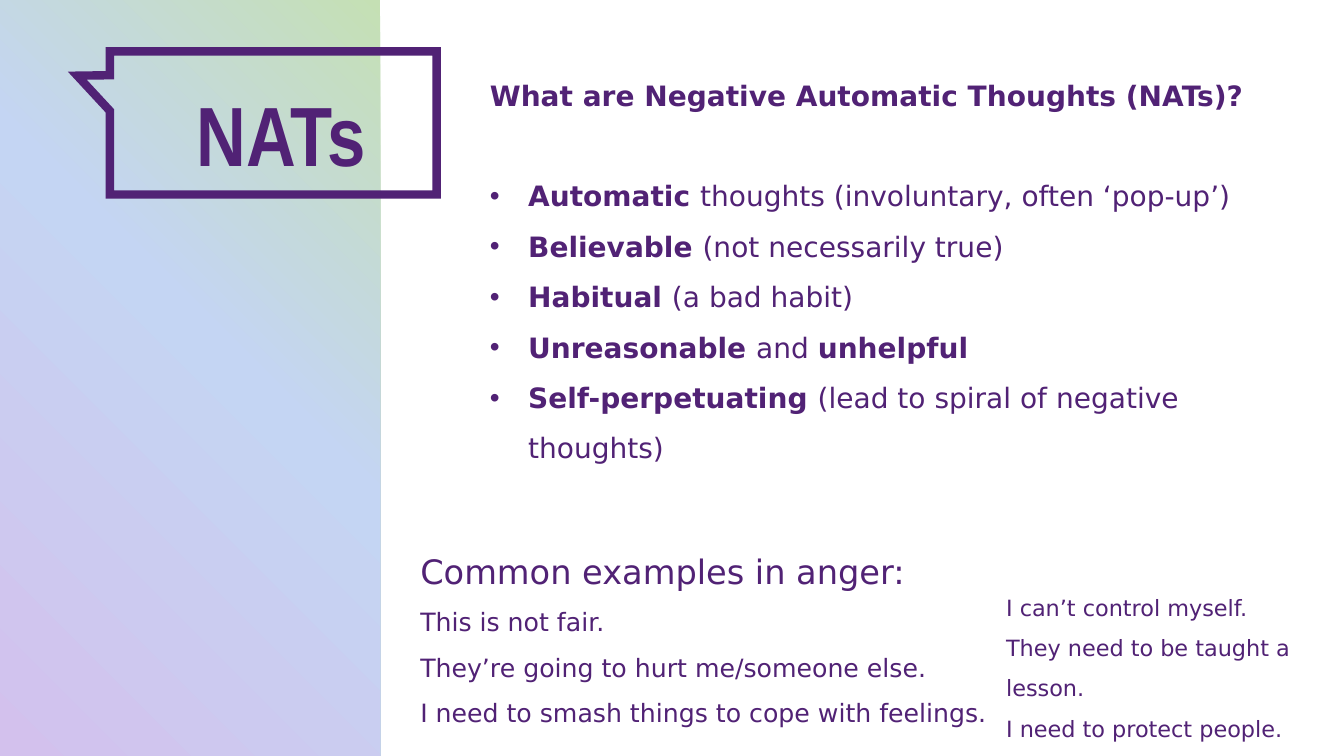
from lxml import etree
from pptx import Presentation
from pptx.dml.color import RGBColor
from pptx.enum.shapes import MSO_SHAPE
from pptx.enum.text import MSO_AUTO_SIZE
from pptx.oxml.ns import qn
from pptx.util import Inches, Pt

RECTANGLE = MSO_SHAPE.RECTANGLE
CALLOUT = MSO_SHAPE.RECTANGULAR_CALLOUT
GROW = MSO_AUTO_SIZE.SHAPE_TO_FIT_TEXT
BLANK_LAYOUT = 6
WIDTH, HEIGHT = Inches(13.33), Inches(7.5)
BODY_FONT, TITLE_FONT = "DejaVu Sans", "Arial Narrow"
COLOURS = {"purple": "512275", "pink": "D3C1ED", "blue": "C4D5F3", "green": "C5E0B4"}
PANEL_STOPS = [(0, "pink"), (56, "blue"), (100, "green")]

TRAITS = [
    [("Automatic ", True), ("thoughts (involuntary, often ‘pop-up’)", False)],
    [("Believable ", True), ("(not necessarily true)", False)],
    [("Habitual ", True), ("(a bad habit)", False)],
    [("Unreasonable ", True), ("and ", False), ("unhelpful", True)],
    [("Self-perpetuating ", True), ("(lead to spiral of negative thoughts)", False)],
]
EXAMPLES = [
    "This is not fair.",
    "They’re going to hurt me/someone else.",
    "I need to smash things to cope with feelings.",
]
MORE_EXAMPLES = [
    "I can’t control myself.",
    "They need to be taught a lesson.",
    "I need to protect people.",
]


def place(left, top, width, height):
    """Turn percentages of the slide's size into lengths."""
    return [int(share * side / 100) for share, side in
            zip((left, top, width, height), (WIDTH, HEIGHT, WIDTH, HEIGHT))]


def colour(name):
    """Return a named colour."""
    return RGBColor.from_string(COLOURS[name])


def add_plain_shape(slide, kind, box):
    """Add a preset shape without shadow, fill or line."""
    shape = slide.shapes.add_shape(kind, *place(*box))
    shape.shadow.inherit = False
    shape.fill.background()
    shape.line.fill.background()
    return shape


def add_gradient_panel(slide, box, stops):
    """Add a panel whose gradient spreads from its bottom left corner."""
    panel = add_plain_shape(slide, RECTANGLE, box)
    gradient = etree.Element(qn("a:gradFill"), rotWithShape="1")
    stop_list = etree.SubElement(gradient, qn("a:gsLst"))
    for percent, name in stops:
        stop = etree.SubElement(stop_list, qn("a:gs"), pos=str(percent * 1000))
        etree.SubElement(stop, qn("a:srgbClr"), val=COLOURS[name])
    spread = etree.SubElement(gradient, qn("a:path"), path="circle")
    etree.SubElement(spread, qn("a:fillToRect"), t="100000", r="100000")
    properties = panel.element.spPr
    properties.replace(properties.find(qn("a:noFill")), gradient)


def add_callout(slide, box, pointer):
    """Add an outlined speech callout with sharp corners."""
    callout = add_plain_shape(slide, CALLOUT, box)
    for index, value in enumerate(pointer):
        callout.adjustments[index] = value
    callout.line.color.rgb = colour("purple")
    callout.line.width = Pt(6)
    outline = callout.element.spPr.find(qn("a:ln"))
    etree.SubElement(outline, qn("a:miter"), lim="800000")


def add_text_frame(slide, box):
    """Add a wrapping text box and return its text frame."""
    frame = slide.shapes.add_textbox(*place(*box)).text_frame
    frame.word_wrap = True
    frame.auto_size = GROW
    return frame


def add_paragraph(frame, runs, size, font=BODY_FONT, spacing=1.5):
    """Write (text, bold) runs into the frame's next paragraph."""
    first = frame.paragraphs[0]
    paragraph = frame.add_paragraph() if first.runs else first
    paragraph.line_spacing = spacing
    for text, bold in runs:
        run = paragraph.add_run()
        run.text = text
        run.font.size = Pt(size)
        run.font.name = font
        run.font.bold = bold
        run.font.color.rgb = colour("purple")
    return paragraph


def indent(paragraph, margin, first_line=0):
    """Set the left margin and first line indent in inches."""
    properties = paragraph._p.get_or_add_pPr()
    properties.set("marL", str(Inches(margin)))
    properties.set("indent", str(Inches(first_line)))
    return properties


def add_bullet(frame, runs, size):
    """Add a bulleted paragraph with a hanging indent."""
    properties = indent(add_paragraph(frame, runs, size), 0.38, -0.38)
    etree.SubElement(properties, qn("a:buFont"), typeface="Arial")
    etree.SubElement(properties, qn("a:buChar"), char="•")


def add_lines(frame, lines, size):
    """Add plain lines of one size."""
    for line in lines:
        add_paragraph(frame, [(line, False)], size)


def main():
    """Build and save the slide."""
    presentation = Presentation()
    presentation.slide_width, presentation.slide_height = WIDTH, HEIGHT
    slide = presentation.slides.add_slide(presentation.slide_layouts[BLANK_LAYOUT])

    add_gradient_panel(slide, (0, 0, 28.28, 100), PANEL_STOPS)
    add_callout(slide, (8.18, 6.8, 24.31, 18.93), (-0.6, -0.33))
    title = add_text_frame(slide, (12.45, 7.6, 16.2, 16))
    indent(add_paragraph(title, [("NATs", True)], 60, TITLE_FONT, 1.2), 0.19)

    traits = add_text_frame(slide, (35.71, 7.47, 59.49, 68.67))
    question = [("What are Negative Automatic Thoughts (NATs)?", True)]
    add_paragraph(traits, question, 20).space_after = Pt(36)
    for runs in TRAITS:
        add_bullet(traits, runs, 20)

    examples = add_text_frame(slide, (30.53, 69.6, 50.04, 26.8))
    add_lines(examples, ["Common examples in anger:"], 24)
    add_lines(examples, EXAMPLES, 18)
    add_lines(add_text_frame(slide, (74.12, 76.13, 25.88, 22.8)), MORE_EXAMPLES, 16)

    presentation.save("out.pptx")


if __name__ == "__main__":
    main()
